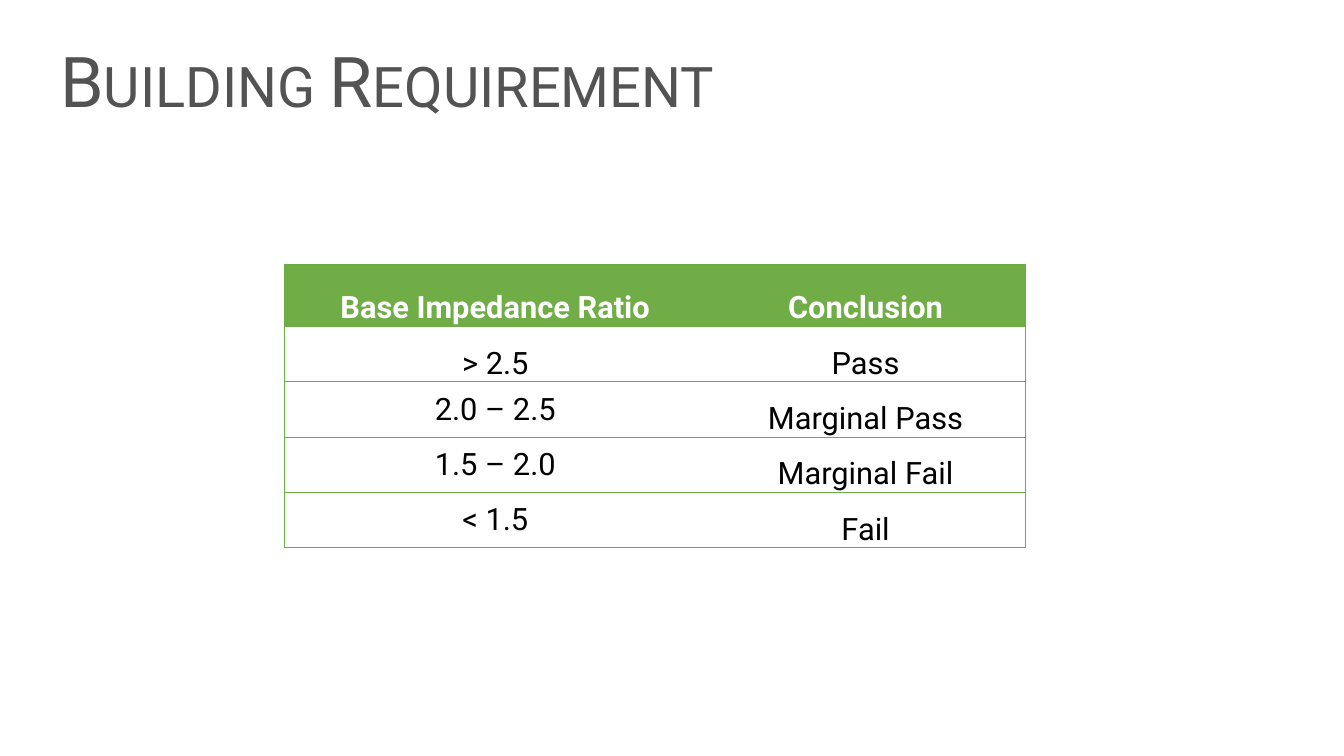
"""Build the Building Requirement slide with its impedance ratio table."""
from lxml.etree import SubElement
from pptx import Presentation
from pptx.dml.color import RGBColor
from pptx.enum.text import MSO_ANCHOR, MSO_AUTO_SIZE, PP_ALIGN
from pptx.oxml.ns import qn
from pptx.util import Cm, Pt

FONT = "Roboto"
TITLE_GREY = RGBColor(0x53, 0x53, 0x53)
HEADER_GREEN = RGBColor(0x70, 0xAD, 0x47)
BORDER_GREEN = RGBColor(0x6D, 0xAC, 0x43)
WHITE = RGBColor(0xFF, 0xFF, 0xFF)
BLACK = RGBColor(0, 0, 0)
NO_STYLE = "{2D5ABB26-0587-4C30-8999-92F81FD0307C}"

ROWS = [
    ("Base Impedance Ratio", "Conclusion"),
    ("> 2.5", "Pass"),
    ("2.0 – 2.5", "Marginal Pass"),
    ("1.5 – 2.0", "Marginal Fail"),
    ("< 1.5", "Fail"),
]
COLUMN_WIDTHS = [Cm(21.23), Cm(16.1)]
HEADER_HEIGHT, ROW_HEIGHT = Cm(3.1), Cm(2.79)


def add_border(cell, side):
    line = SubElement(cell._tc.get_or_add_tcPr(), qn(f"a:ln{side}"), w=str(Pt(0.75)))
    fill = SubElement(line, qn("a:solidFill"))
    SubElement(fill, qn("a:srgbClr"), val=str(BORDER_GREEN))


presentation = Presentation()
presentation.slide_width, presentation.slide_height = Cm(67.74), Cm(38.1)
slide = presentation.slides.add_slide(presentation.slide_layouts[5])

title = slide.shapes.title
title.left, title.top, title.width, title.height = Cm(2.79), Cm(2.03), Cm(58.42), Cm(4.45)
title.text_frame.text = "Building Requirement"
title.text_frame.auto_size = MSO_AUTO_SIZE.NONE
title.text_frame.vertical_anchor = MSO_ANCHOR.MIDDLE
paragraph = title.text_frame.paragraphs[0]
paragraph.alignment = PP_ALIGN.LEFT
paragraph.line_spacing = 0.9
run = paragraph.runs[0]
run.font.name, run.font.size = FONT, Pt(100)
run.font.color.rgb = TITLE_GREY
run._r.get_or_add_rPr().set("cap", "small")

table_height = HEADER_HEIGHT + ROW_HEIGHT * (len(ROWS) - 1)
table = slide.shapes.add_table(
    len(ROWS), len(COLUMN_WIDTHS), Cm(14.35), Cm(13.34), sum(COLUMN_WIDTHS), table_height
).table
table._tbl.tblPr.find(qn("a:tableStyleId")).text = NO_STYLE
for column, width in zip(table.columns, COLUMN_WIDTHS):
    column.width = width

for row_index, texts in enumerate(ROWS):
    is_header = row_index == 0
    table.rows[row_index].height = HEADER_HEIGHT if is_header else ROW_HEIGHT
    for column_index, text in enumerate(texts):
        cell = table.cell(row_index, column_index)
        for side in ("LTB", "RTB")[column_index]:
            add_border(cell, side)
        if is_header:
            cell.fill.solid()
            cell.fill.fore_color.rgb = HEADER_GREEN
        else:
            cell.fill.background()
        cell.margin_left = cell.margin_right = cell.margin_top = Cm(0.03)
        cell.margin_bottom = 0
        is_middle = column_index == 0 and row_index > 1
        cell.vertical_anchor = MSO_ANCHOR.MIDDLE if is_middle else MSO_ANCHOR.BOTTOM
        cell.text_frame.text = text
        paragraph = cell.text_frame.paragraphs[0]
        paragraph.alignment = PP_ALIGN.CENTER
        font = paragraph.runs[0].font
        font.name, font.size, font.bold = FONT, Pt(44), is_header
        font.color.rgb = WHITE if is_header else BLACK

presentation.save("out.pptx")
